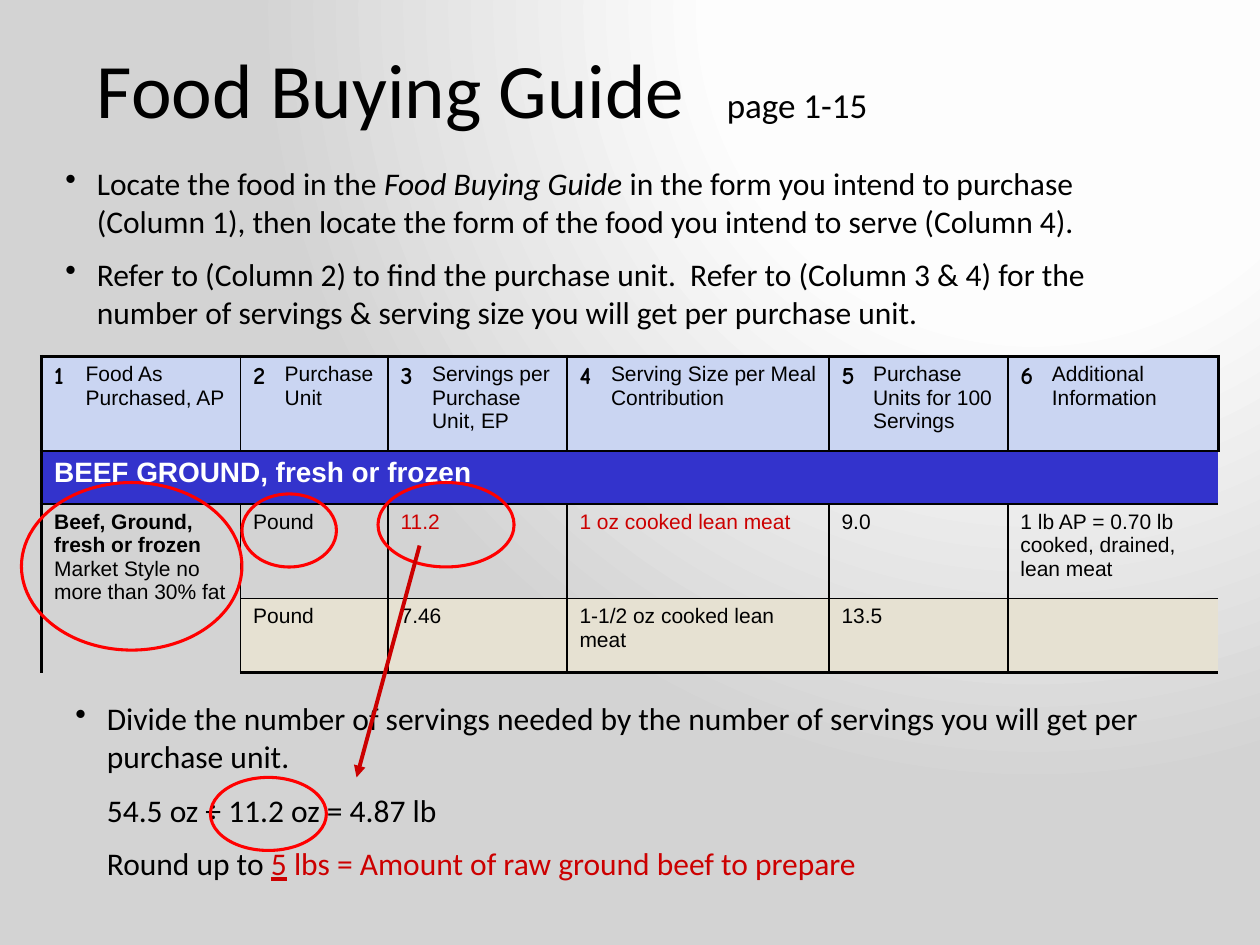
from lxml import etree
from pptx import Presentation
from pptx.dml.color import RGBColor
from pptx.enum.shapes import MSO_CONNECTOR, MSO_SHAPE
from pptx.oxml import parse_xml
from pptx.oxml.ns import nsdecls, qn
from pptx.util import Inches, Pt

BLACK, WHITE, RED, DARK_RED = "000000", "FFFFFF", "FF0000", "CC0000"
HEADER_BLUE, BAND_BLUE, SAND = "CAD5F2", "3333CC", "E6E1D2"
INDENT = 0.25
THIN, THICK = 1, 2.25

NUMBER_WIDTH = 0.25
LABEL_WIDTHS = [1.33, 0.92, 1.17, 1.83, 1.17, 1.42]
ROW_HEIGHTS = [0.75, 0.42, 0.75, 0.59]
HEADINGS = ["Food As Purchased, AP", "Purchase Unit",
            "Servings per Purchase Unit, EP",
            "Serving Size per Meal Contribution",
            "Purchase Units for 100 Servings", "Additional Information"]
SERVINGS = [
    ["Pound", "11.2", "1 oz cooked lean meat", "9.0",
     "1 lb AP = 0.70 lb cooked, drained, lean meat"],
    ["Pound", "7.46", "1-1/2 oz cooked lean meat", "13.5", ""],
]
CIRCLES = [(1.92, 3.92, 0.75, 0.58), (1.67, 6.17, 0.92, 0.58),
           (3, 3.83, 1.08, 0.67), (0.17, 3.83, 1.75, 1.33)]


def color(hex_string):
    return RGBColor.from_string(hex_string)


def add_text(paragraph, text, size=18, font="Calibri", fill=BLACK,
             bold=False, italic=False, underline=False):
    run = paragraph.add_run()
    run.text = text
    run.font.size = Pt(size)
    run.font.name = font
    run.font.color.rgb = color(fill)
    run.font.bold = bold
    run.font.italic = italic
    run.font.underline = underline


def add_box(slide, box):
    frame = slide.shapes.add_textbox(*map(Inches, box)).text_frame
    frame.word_wrap = True
    return frame


def indent(paragraph, bullet=False):
    properties = paragraph._p.get_or_add_pPr()
    properties.set("marL", str(Inches(INDENT)))
    properties.set("indent", str(-Inches(INDENT) if bullet else 0))
    if bullet:
        mark = etree.SubElement(properties, qn("a:buChar"))
        mark.set("char", "•")


def add_background(slide):
    stops = "".join(
        f'<a:gs pos="{position * 1000}"><a:srgbClr val="{shade}"/></a:gs>'
        for position, shade in [(0, WHITE), (40, "FDFDFD"), (100, "D3D3D3")])
    gradient = parse_xml(
        f'<a:gradFill {nsdecls("a")} rotWithShape="1"><a:gsLst>{stops}</a:gsLst>'
        '<a:path path="circle"><a:fillToRect l="65000" t="0" r="0" b="98000"/>'
        '</a:path></a:gradFill>')
    properties = slide.element.cSld.get_or_add_bgPr()
    properties.replace(properties[0], gradient)


def add_title(slide, box):
    frame = add_box(slide, box)
    frame.margin_top = Inches(0.08)
    paragraph = frame.paragraphs[0]
    indent(paragraph)
    tabs = etree.SubElement(paragraph._p.get_or_add_pPr(), qn("a:tabLst"))
    tab = etree.SubElement(tabs, qn("a:tab"))
    tab.set("pos", str(Inches(6.8)))
    tab.set("algn", "l")
    add_text(paragraph, "Food Buying Guide\t", size=44)
    add_text(paragraph, "page 1-15", size=20)


def add_points(slide, box, points):
    """Each point is (has bullet, [(text, format), ...])."""
    frame = add_box(slide, box)
    frame.margin_right = Inches(0.2)
    for number, (bullet, runs) in enumerate(points):
        paragraph = frame.add_paragraph() if number else frame.paragraphs[0]
        indent(paragraph, bullet)
        if number:
            paragraph.space_before = Pt(9)
        for text, look in runs:
            add_text(paragraph, text, **look)


def set_edge(cell, side, width):
    """Draw one edge of a cell; a width of 0 leaves it open."""
    edge = etree.SubElement(cell._tc.get_or_add_tcPr(), qn(f"a:ln{side}"))
    edge.set("w", str(Pt(width)))
    if width:
        fill = etree.SubElement(edge, qn("a:solidFill"))
        etree.SubElement(fill, qn("a:srgbClr")).set("val", BLACK)
    else:
        etree.SubElement(edge, qn("a:noFill"))


def format_region(table, top, left, rows, columns, fill=None, merge=True):
    """Outline and fill a block of cells, and return its first cell."""
    bottom, right = top + rows - 1, left + columns - 1
    last_row, last_column = len(table.rows) - 1, len(table.columns) - 1
    for row in range(top, bottom + 1):
        for column in range(left, right + 1):
            cell = table.cell(row, column)
            for side, on_edge, outer in (
                    ("L", column == left, column == 0),
                    ("R", column == right, column == last_column),
                    ("T", row == top, row == 0),
                    ("B", row == bottom, row == last_row)):
                set_edge(cell, side, (THICK if outer else THIN) if on_edge else 0)
            if fill:
                cell.fill.solid()
                cell.fill.fore_color.rgb = color(fill)
            else:
                cell.fill.background()
    first = table.cell(top, left)
    if merge:
        first.merge(table.cell(bottom, right))
    return first


def add_guide_table(slide, box):
    columns = 2 * len(HEADINGS)
    table = slide.shapes.add_table(
        len(ROW_HEIGHTS), columns, *map(Inches, box)).table
    table.first_row = table.horz_banding = False
    for row, height in zip(table.rows, ROW_HEIGHTS):
        row.height = Inches(height)
    for number, (heading, width) in enumerate(zip(HEADINGS, LABEL_WIDTHS)):
        left = 2 * number
        table.columns[left].width = Inches(NUMBER_WIDTH)
        table.columns[left + 1].width = Inches(width)
        number_cell = format_region(table, 0, left, 1, 2, HEADER_BLUE, merge=False)
        number_cell.margin_right = 0
        add_text(number_cell.text_frame.paragraphs[0], str(number + 1),
                 size=14, font="Comic Neue", bold=True)
        label = table.cell(0, left + 1)
        label.margin_right = Inches(0.05)
        add_text(label.text_frame.paragraphs[0], heading, size=12, font="Arial")

    band = format_region(table, 1, 0, 1, columns, BAND_BLUE)
    add_text(band.text_frame.paragraphs[0], "BEEF GROUND, fresh or frozen",
             size=16, font="Arial", fill=WHITE, bold=True)

    food = format_region(table, 2, 0, 2, 2).text_frame.paragraphs[0]
    add_text(food, "Beef, Ground, fresh or frozen", size=12, font="Arial", bold=True)
    add_text(food, " Market Style no more than 30% fat", size=12, font="Arial")

    for row, (values, fill) in enumerate(zip(SERVINGS, (None, SAND)), 2):
        for number, value in enumerate(values, 1):
            cell = format_region(table, row, 2 * number, 1, 2, fill)
            chosen = row == 2 and number in (2, 3)
            if value:
                add_text(cell.text_frame.paragraphs[0], value, size=12,
                         font="Arial", fill=DARK_RED if chosen else BLACK)


def add_circle(slide, box):
    circle = slide.shapes.add_shape(MSO_SHAPE.OVAL, *map(Inches, box))
    circle.shadow.inherit = False
    circle.fill.background()
    circle.line.color.rgb = color(RED)
    circle.line.width = Pt(1.75)


def add_arrow(slide, start, end):
    arrow = slide.shapes.add_connector(
        MSO_CONNECTOR.STRAIGHT, *map(Inches, start + end))
    arrow.line.color.rgb = color(DARK_RED)
    arrow.line.width = Pt(2.25)
    etree.SubElement(arrow.line._get_or_add_ln(), qn("a:tailEnd")).set("type", "triangle")
    etree.SubElement(arrow._element.spPr, qn("a:effectLst"))


def main():
    presentation = Presentation()
    presentation.slide_width, presentation.slide_height = Inches(10), Inches(7.5)
    slide = presentation.slides.add_slide(presentation.slide_layouts[6])
    add_background(slide)
    add_title(slide, (0.42, 0.25, 9.33, 1.25))
    add_guide_table(slide, (0.33, 2.83, 9.33, 2.5))
    add_points(slide, (0.5, 5.5, 9.08, 1.6), [
        (True, [("Divide the number of servings needed by the number of "
                 "servings you will get per purchase unit.", {})]),
        (False, [("54.5 oz ÷ 11.2 oz = 4.87 lb", {})]),
        (False, [("Round up to ", {}),
                 ("5", {"fill": DARK_RED, "underline": True}),
                 (" lbs = Amount of raw ground beef to prepare",
                  {"fill": DARK_RED})]),
    ])
    add_points(slide, (0.42, 1.25, 9.08, 1.45), [
        (True, [("Locate the food in the ", {}),
                ("Food Buying Guide", {"italic": True}),
                (" in the form you intend to purchase (Column 1), then locate "
                 "the form of the food you intend to serve (Column 4).", {})]),
        (True, [("Refer to (Column 2) to find the purchase unit.  Refer to "
                 "(Column 3 & 4) for the number of servings & serving size "
                 "you will get per purchase unit.", {})]),
    ])
    for box in CIRCLES:
        add_circle(slide, box)
    add_arrow(slide, (3.33, 4.33), (2.83, 6.17))
    presentation.save("out.pptx")


if __name__ == "__main__":
    main()
